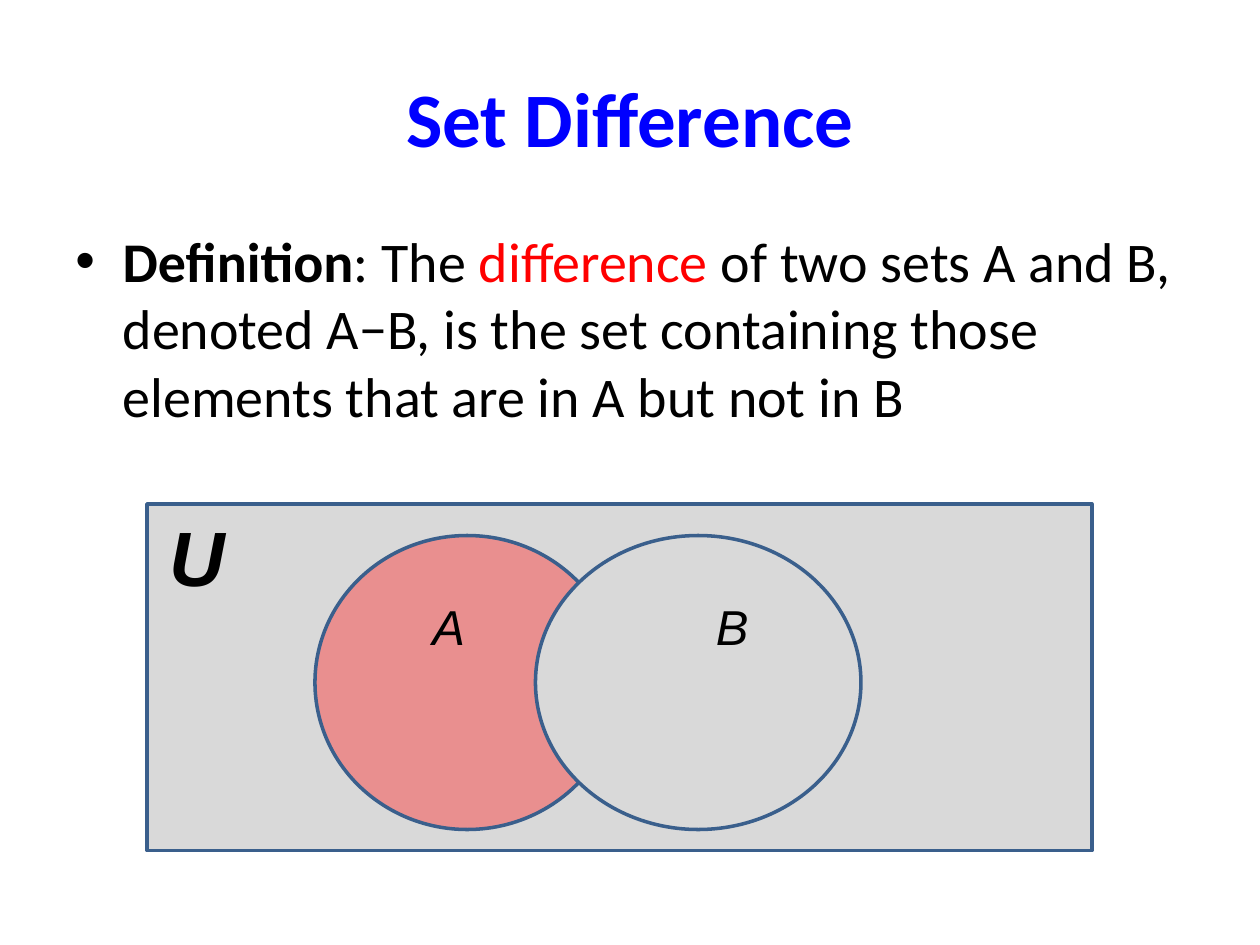
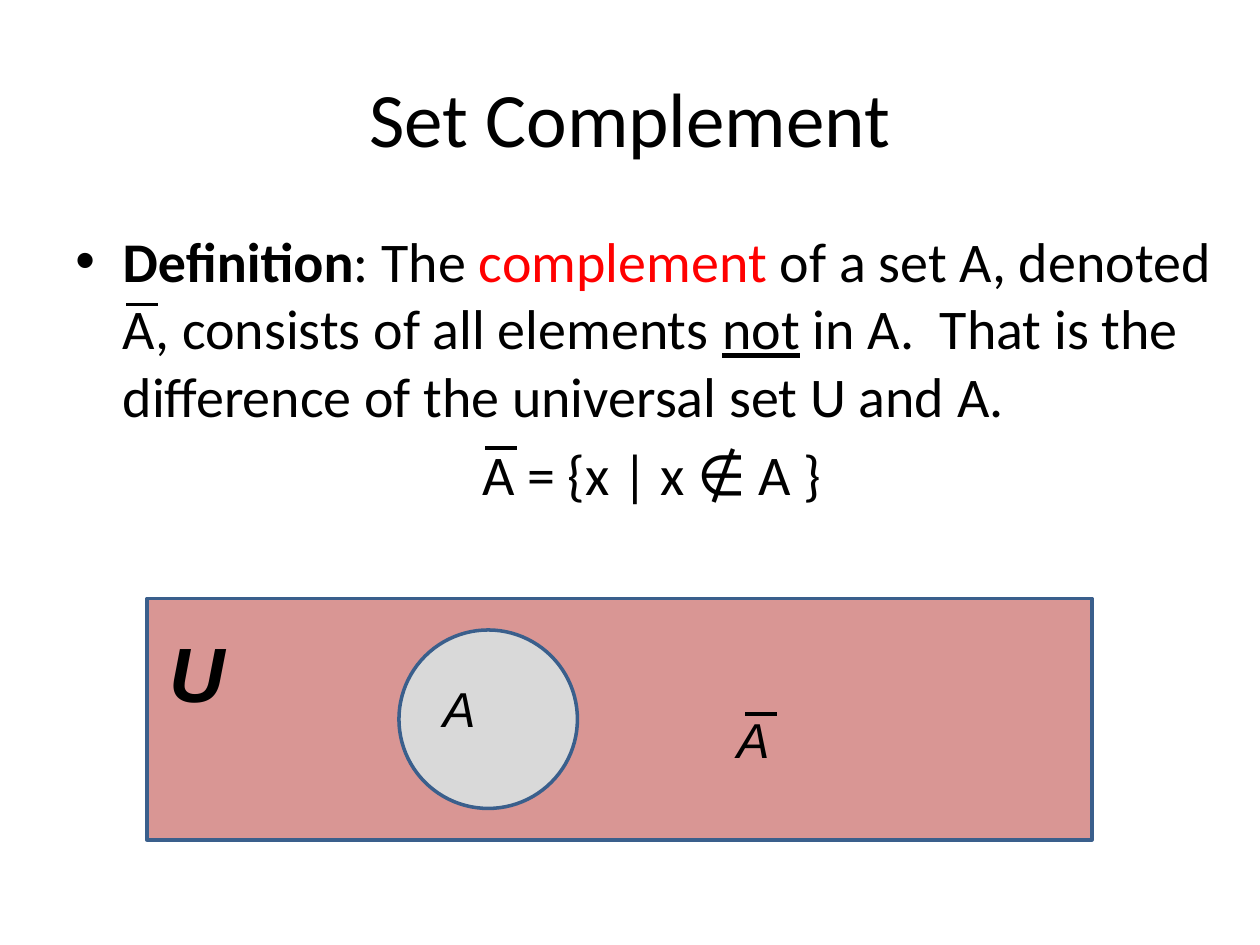
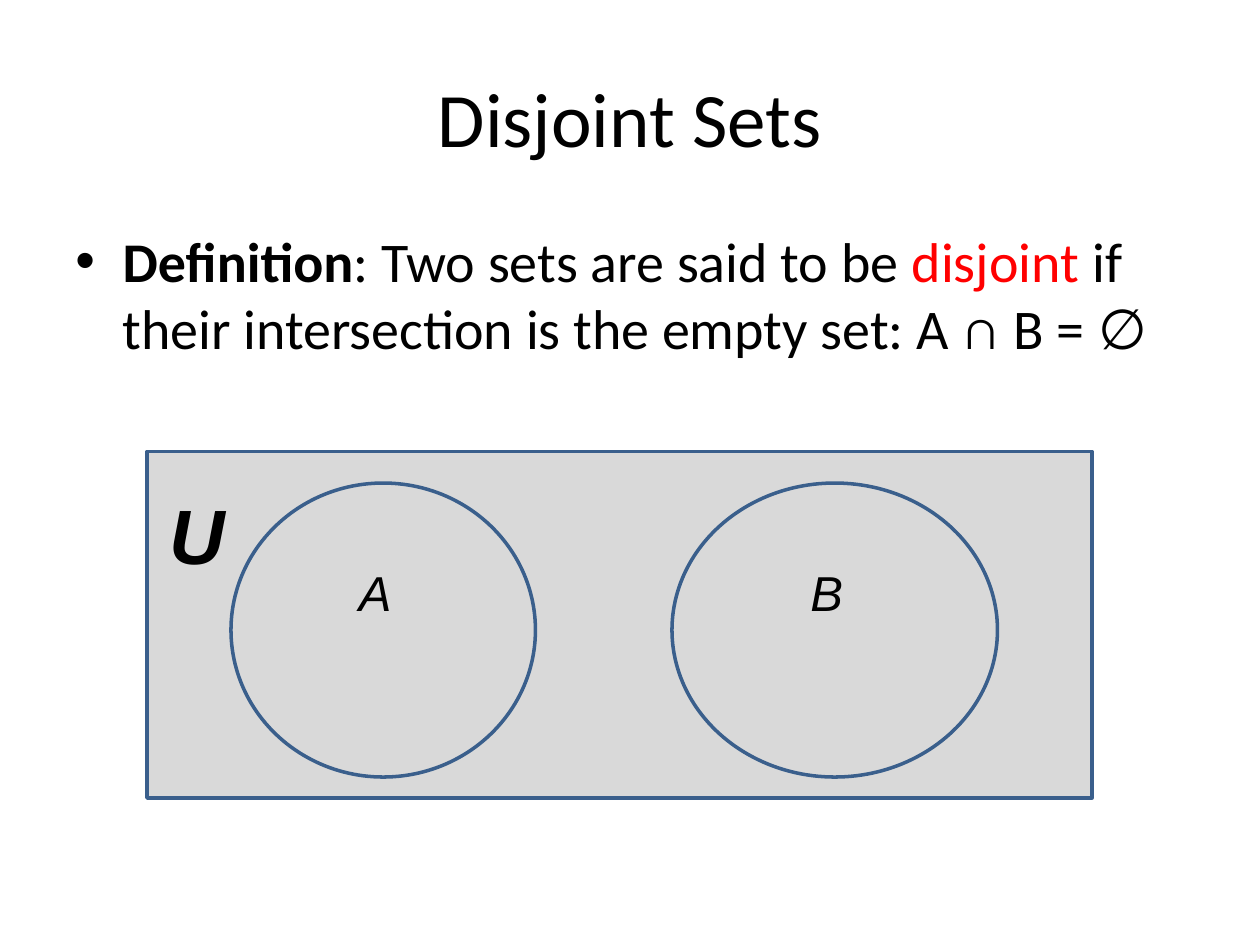
import pptx
import pptx.dml.color
import pptx.enum.shapes
import pptx.enum.text
import pptx.oxml
import pptx.oxml.ns
import pptx.util
import lxml.etree

PX = 7620  # 120 px to the inch
BLACK, BLUE, RED = "000000", "0000FF", "FF0000"
GREY, PINK, ROSE, EDGE = "D9D9D9", "E98F8F", "D99694", "3A5F8C"
KIND = pptx.enum.shapes.MSO_SHAPE
ALIGN = pptx.enum.text.PP_ALIGN
ANCHOR = pptx.enum.text.MSO_ANCHOR

# Text styles
HEAD = {"name": "Calibri", "size": pptx.util.Pt(44)}
BODY = {"name": "Calibri", "size": pptx.util.Pt(32)}
MARK = {"name": "Arial", "size": pptx.util.Pt(28), "italic": True}
WORLD = MARK | {"size": pptx.util.Pt(44), "bold": True}
BOLD, LINED = {"bold": True}, {"underline": True}


def tint(code):
    return pptx.dml.color.RGBColor.from_string(code)


def write(slide, box, paras, style, wrap=True):
    """Add a text box; each paragraph is a list of (text, format, colour)."""
    frame = slide.shapes.add_textbox(*[n * PX for n in box]).text_frame
    frame.word_wrap = wrap
    for i, runs in enumerate(paras):
        para = frame.paragraphs[0] if i == 0 else frame.add_paragraph()
        for text, form, color in runs:
            run = para.add_run()
            run.text = text
            for key, value in (style | form).items():
                setattr(run.font, key, value)
            run.font.color.rgb = tint(color)
    return frame


# Each circle is left, top, width, height, fill; each mark is text, left, top;
# each bar is left, top
slides = [
    {
        "title": ("Set Difference", BOLD, BLUE),
        "width": 1080,
        "text": [[
            (": The ", {}, BLACK),
            ("difference ", {}, RED),
            ("of two sets A and B, denoted A−B, is the set containing those "
             "elements that are in A but not in B", {}, BLACK),
        ]],
        "world": (480, 330, GREY, 479),
        "circles": [(300, 510, 290, 280, PINK), (510, 510, 310, 280, GREY)],
        "marks": [("A", 400, 562), ("B", 670, 562)],
        "bars": [],
    },
    {
        "title": ("Set Complement", {}, BLACK),
        "width": 1122,
        "text": [[
            (": The ", {}, BLACK),
            ("complement ", {}, RED),
            ("of a set A, denoted A, consists of all elements ", {}, BLACK),
            ("not", LINED, BLACK),
            (" in A.  That is the difference of the universal set U and A.",
             {}, BLACK),
        ], [("A = {x | x ∉ A }", {}, BLACK)]],
        "world": (570, 230, ROSE, 590),
        "circles": [(380, 600, 170, 170, GREY)],
        "marks": [("A", 410, 640), ("A", 690, 670)],
        "bars": [(120, 290), (462, 427), (710, 680)],
    },
    {
        "title": ("Disjoint Sets", {}, BLACK),
        "width": 1080,
        "text": [[
            (": Two sets are said to be ", {}, BLACK),
            ("disjoint ", {}, RED),
            ("if their intersection is the empty set: A ∩ B = ∅", {}, BLACK),
        ]],
        "world": (430, 330, GREY, 458),
        "circles": [(220, 460, 290, 280, None), (640, 460, 310, 280, None)],
        "marks": [("A", 330, 530), ("B", 760, 530)],
        "bars": [],
    },
]

deck = pptx.Presentation()
deck.slide_width, deck.slide_height = 1200 * PX, 900 * PX

for page in slides:
    slide = deck.slides.add_slide(deck.slide_layouts[6])

    # Title
    frame = write(slide, (60, 36, 1080, 150), [[page["title"]]], HEAD)
    frame.vertical_anchor = ANCHOR.MIDDLE
    frame.paragraphs[0].alignment = ALIGN.CENTER

    # Definition, bulleted, with a centred formula after it
    first, *rest = page["text"]
    paras = [[("Definition", BOLD, BLACK)] + first] + rest
    frame = write(slide, (60, 210, page["width"], 594), paras, BODY)
    for i, para in enumerate(frame.paragraphs):
        para.space_before = pptx.util.Pt(6.4)
        props = para._p.get_or_add_pPr()
        props.set("marL", str(45 * PX))
        props.set("indent", str(-45 * PX))
        if i == 0:
            for tag, key, value in (("a:buFont", "typeface", "Arial"),
                                    ("a:buChar", "char", "•")):
                lxml.etree.SubElement(props, pptx.oxml.ns.qn(tag)).set(key, value)
        else:
            para.alignment = ALIGN.CENTER

    # Universal set and the sets in it
    top, height, fill, label = page["world"]
    forms = [(KIND.RECTANGLE, 140, top, 900, height, fill)]
    forms += [(KIND.OVAL, *circle) for circle in page["circles"]]
    for kind, *box, fill in forms:
        shape = slide.shapes.add_shape(kind, *[n * PX for n in box])
        shape.shadow.inherit = False
        shape.line.color.rgb = tint(EDGE)
        shape.line.width = pptx.util.Pt(2)
        if fill:
            shape.fill.solid()
            shape.fill.fore_color.rgb = tint(fill)
        else:
            shape.fill.background()

    # Set names
    write(slide, (150, label, 70, 101), [[("U", {}, BLACK)]], WORLD, False)
    for text, left, top in page["marks"]:
        write(slide, (left, top, 50, 68), [[(text, {}, BLACK)]], MARK, False)

    # Bars over the complements
    for left, top in page["bars"]:
        bar = slide.shapes.add_connector(
            pptx.enum.shapes.MSO_CONNECTOR.STRAIGHT,
            left * PX, top * PX, (left + 30) * PX, top * PX)
        bar.line.color.rgb = tint(BLACK)
        bar.line.width = pptx.util.Pt(2.25)
        lxml.etree.SubElement(bar._element.spPr, pptx.oxml.ns.qn("a:effectLst"))

deck.save("out.pptx")
